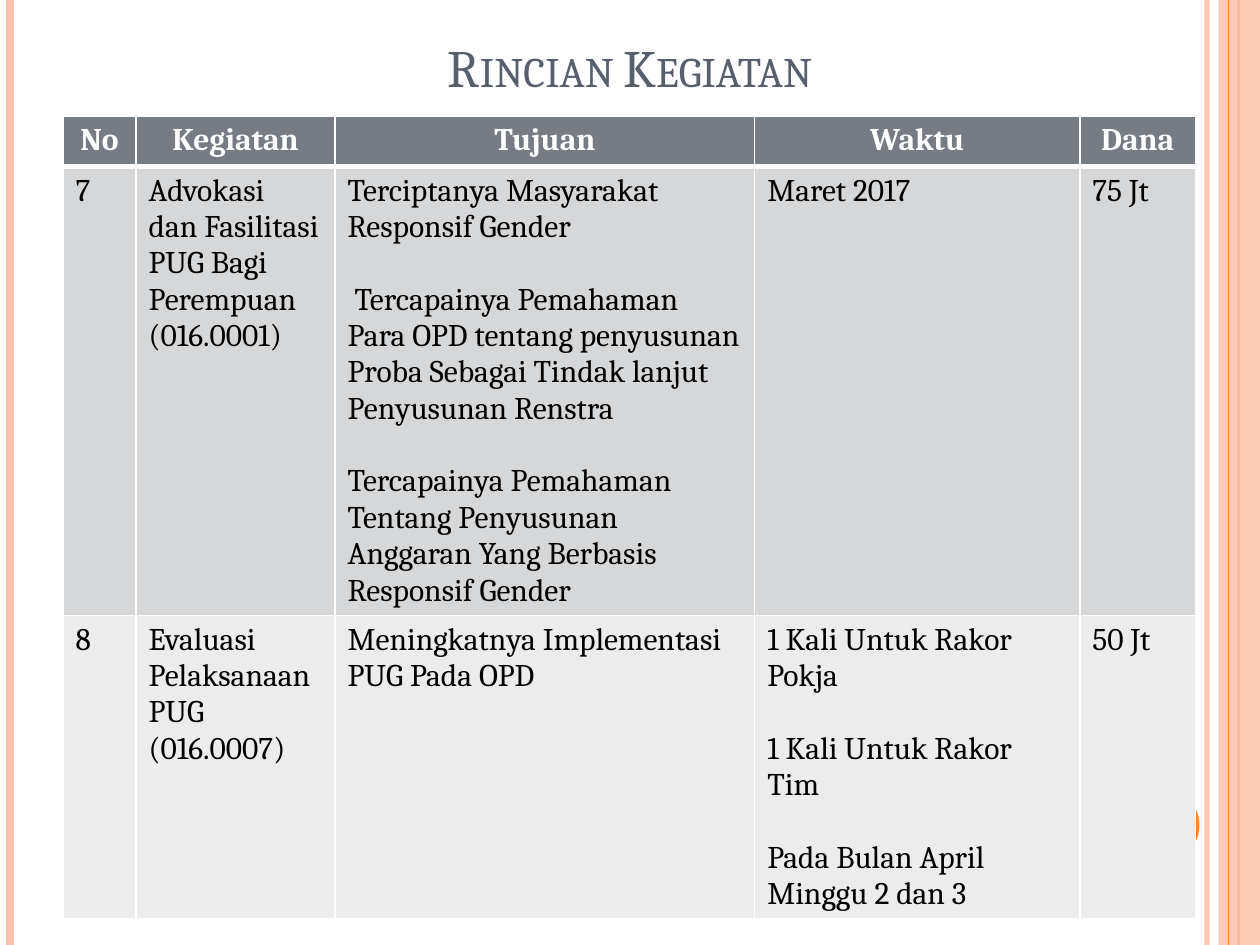
import lxml.etree
import pptx
import pptx.dml.color
import pptx.enum.shapes
import pptx.enum.text
import pptx.oxml
import pptx.oxml.ns
import pptx.util

Inches = pptx.util.Inches
Pt = pptx.util.Pt
PP_ALIGN = pptx.enum.text.PP_ALIGN
MSO_SHAPE = pptx.enum.shapes.MSO_SHAPE
qn = pptx.oxml.ns.qn

COLOURS = {
    "peach": "FEC3AE",
    "orange": "FE8637",
    "title": "575F6D",
    "header": "777C84",
    "odd": "D6D7D9",
    "even": "ECECED",
    "white": "FFFFFF",
    "black": "000000",
}

HEADINGS = ["No", "Kegiatan", "Tujuan", "Waktu", "Dana"]
ACTIVITIES = [
    [
        ["7"],
        ["Advokasi\vdan Fasilitasi PUG Bagi Perempuan (016.0001)"],
        [
            "Terciptanya Masyarakat Responsif Gender",
            " Tercapainya Pemahaman Para OPD tentang penyusunan Proba "
            "Sebagai Tindak lanjut Penyusunan Renstra",
            "Tercapainya Pemahaman Tentang Penyusunan Anggaran Yang "
            "Berbasis Responsif Gender",
        ],
        ["Maret 2017"],
        ["75 Jt"],
    ],
    [
        ["8"],
        ["Evaluasi Pelaksanaan PUG (016.0007)"],
        ["Meningkatnya Implementasi PUG Pada OPD"],
        [
            "1 Kali Untuk Rakor Pokja",
            "1 Kali Untuk Rakor Tim",
            "Pada Bulan April Minggu 2 dan 3",
        ],
        ["50 Jt"],
    ],
]
COLUMN_WIDTHS = [0.58, 1.58, 3.33, 2.58, 0.92]
ROW_HEIGHTS = [0.4, 3.56, 2.4]


class SlideBuilder:
    font_name = "Cambria"
    paragraph_gap = Pt(20.8)

    def __init__(self, slide):
        self.slide = slide

    def rgb(self, colour):
        return pptx.dml.color.RGBColor.from_string(COLOURS[colour])

    def format_font(self, font, colour, **values):
        for key, value in {"name": self.font_name, **values}.items():
            setattr(font, key, value)
        font.color.rgb = self.rgb(colour)

    def set_opacity(self, element, percent):
        for colour in element.iter(qn("a:srgbClr")):
            alpha = lxml.etree.SubElement(colour, qn("a:alpha"))
            alpha.set("val", str(percent * 1000))

    def vertical_rule(self, x, colour, weight, opacity=100):
        rule = self.slide.shapes.add_connector(
            pptx.enum.shapes.MSO_CONNECTOR.STRAIGHT,
            Inches(x), 0, Inches(x), Inches(7.5))
        rule.line.color.rgb = self.rgb(colour)
        rule.line.width = Pt(weight)
        properties = rule._element.spPr
        if opacity < 100:
            self.set_opacity(properties, opacity)
        lxml.etree.SubElement(properties, qn("a:effectLst"))

    def shape(self, preset, box, colour, opacity=100):
        shape = self.slide.shapes.add_shape(preset, *map(Inches, box))
        shape.shadow.inherit = False
        shape.fill.solid()
        shape.fill.fore_color.rgb = self.rgb(colour)
        shape.line.fill.background()
        if opacity < 100:
            self.set_opacity(shape._element.spPr, opacity)

    def title(self, text, box):
        title = self.slide.shapes.title
        title.left, title.top, title.width, title.height = map(Inches, box)
        frame = title.text_frame
        frame.text = text
        frame_format = {
            "word_wrap": True,
            "auto_size": pptx.enum.text.MSO_AUTO_SIZE.NONE,
            "vertical_anchor": pptx.enum.text.MSO_ANCHOR.BOTTOM,
        }
        for key, value in frame_format.items():
            setattr(frame, key, value)
        heading = frame.paragraphs[0]
        heading.alignment = PP_ALIGN.CENTER
        run = heading.runs[0]
        self.format_font(run.font, "title", size=Pt(30))
        run._r.get_or_add_rPr().set("cap", "small")

    def borders(self, cell, top, bottom):
        properties = cell._tc.get_or_add_tcPr()
        weights = {"lnL": 1, "lnR": 1, "lnT": top, "lnB": bottom}
        for position, (side, weight) in enumerate(weights.items()):
            line = pptx.oxml.parse_xml(
                f'<a:{side} {pptx.oxml.ns.nsdecls("a")} w="{Pt(weight)}">'
                f'<a:solidFill><a:srgbClr val="{COLOURS["white"]}"/></a:solidFill>'
                f'</a:{side}>')
            properties.insert(position, line)

    def cell(self, cell, paragraphs, fill, colour, alignment, bold):
        cell.fill.solid()
        cell.fill.fore_color.rgb = self.rgb(fill)
        cell.text_frame.text = "\n".join(paragraphs)
        for position, paragraph in enumerate(cell.text_frame.paragraphs):
            paragraph.alignment = alignment
            if position:
                paragraph.space_before = self.paragraph_gap
            for run in paragraph.runs:
                self.format_font(run.font, colour, size=Pt(18), bold=bold)

    def table(self, left, top, widths, heights, headings, records):
        table = self.slide.shapes.add_table(
            len(heights), len(widths), Inches(left), Inches(top),
            Inches(sum(widths)), Inches(sum(heights))).table
        for column, width in zip(table.columns, widths):
            column.width = Inches(width)
        for row, height in zip(table.rows, heights):
            row.height = Inches(height)
        for column, heading in enumerate(headings):
            cell = table.cell(0, column)
            self.cell(cell, [heading], "header", "white", PP_ALIGN.CENTER, True)
            self.borders(cell, 1, 3)
        for row, record in enumerate(records, 1):
            fill = "odd" if row % 2 else "even"
            for column, paragraphs in enumerate(record):
                cell = table.cell(row, column)
                self.cell(cell, paragraphs, fill, "black", PP_ALIGN.LEFT, False)
                self.borders(cell, 3 if row == 1 else 1, 1)


def main():
    presentation = pptx.Presentation()
    presentation.slide_width = Inches(10)
    presentation.slide_height = Inches(7.5)
    title_only = presentation.slide_layouts[5]
    builder = SlideBuilder(presentation.slides.add_slide(title_only))

    builder.vertical_rule(9.58, "peach", 3, 93)
    builder.vertical_rule(0.08, "peach", 4.5)
    builder.vertical_rule(9.83, "orange", 1.5)
    builder.shape(MSO_SHAPE.RECTANGLE, (9.67, 0, 0.33, 7.5), "peach", 87)
    builder.vertical_rule(9.75, "orange", 0.75)
    builder.shape(MSO_SHAPE.OVAL, (8.92, 6.25, 0.6, 0.6), "orange")
    builder.table(0.5, 0.92, COLUMN_WIDTHS, ROW_HEIGHTS, HEADINGS, ACTIVITIES)
    builder.title("Rincian Kegiatan", (0.5, -0.17, 9, 1))

    presentation.save("out.pptx")


if __name__ == "__main__":
    main()
